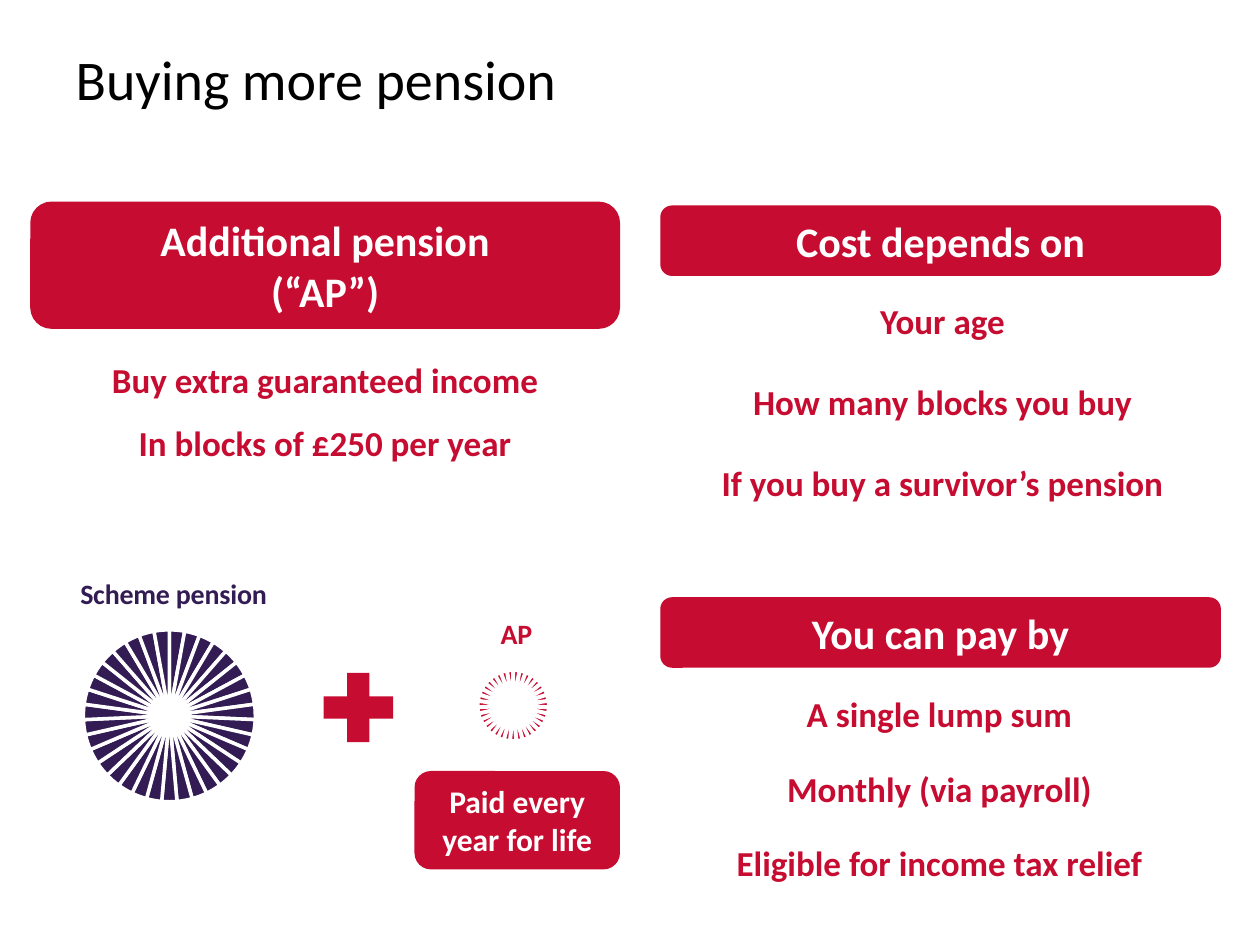
from dataclasses import dataclass

from pptx import Presentation
from pptx.chart.data import CategoryChartData
from pptx.dml.color import RGBColor
from pptx.enum.chart import XL_CHART_TYPE
from pptx.enum.shapes import MSO_SHAPE
from pptx.enum.text import MSO_ANCHOR, PP_ALIGN
from pptx.oxml import parse_xml
from pptx.oxml.ns import nsdecls, qn
from pptx.util import Pt

PIE = XL_CHART_TYPE.PIE
ROUNDED, PLUS = MSO_SHAPE.ROUNDED_RECTANGLE, MSO_SHAPE.MATH_PLUS
TOP, MIDDLE = MSO_ANCHOR.TOP, MSO_ANCHOR.MIDDLE
LEFT, CENTER = PP_ALIGN.LEFT, PP_ALIGN.CENTER
SLICES = 35


@dataclass(frozen=True)
class Theme:
    font: str = "Calibri"
    red: RGBColor = RGBColor(0xC6, 0x0C, 0x30)
    purple: RGBColor = RGBColor(0x33, 0x1C, 0x54)
    white: RGBColor = RGBColor(0xFF, 0xFF, 0xFF)
    black: RGBColor = RGBColor(0, 0, 0)
    title: int = 32
    heading: int = 24
    item: int = 20
    note: int = 18
    chart_title: int = 16
    chart: int = 10


THEME = Theme()


@dataclass(frozen=True)
class Box:
    left: float
    top: float
    width: float
    height: float


@dataclass(frozen=True)
class Panel:
    heading: str
    header: Box
    items: tuple[str, ...]
    items_left: float
    items_top: float
    step: float


@dataclass(frozen=True)
class Wheel:
    title: str
    box: Box
    color: RGBColor
    title_at: tuple[float, float]
    plot: tuple[float, float, float, float]  # fractions of the chart
    explosion: int = 0


PANELS = (
    Panel("Additional pension\n(“AP”)", Box(17.3, 115.2, 337, 72.7),
          ("Buy extra guaranteed income", "In blocks of £250 per year"), 17.3, 199.4, 36),
    Panel("Cost depends on", Box(377.3, 117.4, 320.4, 40.3),
          ("Your age", "How many blocks you buy", "If you buy a survivor’s pension"),
          378.4, 165.6, 46.5),
    Panel("You can pay by", Box(377.3, 341.3, 320.4, 40.3),
          ("A single lump sum", "Monthly (via payroll)", "Eligible for income tax relief"),
          376.6, 390.2, 42.8),
)
WHEELS = (
    Wheel("Scheme pension", Box(-20.2, 314.6, 234, 156.2), THEME.purple,
          (0.27, 0.07), (0.29, 0.29, 0.42, 0.63)),
    Wheel("AP", Box(221, 337.7, 144.7, 96.5), THEME.red,
          (0.43, 0.11), (0.36, 0.47, 0.28, 0.42), 9),
)


def place(box: Box) -> tuple[Pt, ...]:
    return Pt(box.left), Pt(box.top), Pt(box.width), Pt(box.height)


def write(tf, text: str, *, size: int, color: RGBColor, bold: bool = True,
          align=CENTER, anchor=MIDDLE) -> None:
    """Fill a text frame, one paragraph per line of text."""
    tf.word_wrap = True
    tf.vertical_anchor = anchor
    for i, line in enumerate(text.split("\n")):
        p = tf.paragraphs[0] if i == 0 else tf.add_paragraph()
        p.alignment = align
        r = p.add_run()
        r.text = line
        r.font.name, r.font.size, r.font.bold = THEME.font, Pt(size), bold
        r.font.color.rgb = color


def add_box(s, kind, box: Box, fill: RGBColor):
    sp = s.shapes.add_shape(kind, *place(box))
    sp.shadow.inherit = False
    sp.fill.solid()
    sp.fill.fore_color.rgb = fill
    sp.line.fill.background()
    return sp


def add_panel(s, panel: Panel) -> None:
    header = add_box(s, ROUNDED, panel.header, THEME.red)
    write(header.text_frame, panel.heading, size=THEME.heading, color=THEME.white)
    for i, item in enumerate(panel.items):
        box = Box(panel.items_left, panel.items_top + i * panel.step, panel.header.width, 34.6)
        sp = add_box(s, ROUNDED, box, THEME.white)
        write(sp.text_frame, item, size=THEME.item, color=THEME.red)


def set_layout(element, index: int, values: dict[str, float], inner: bool = False) -> None:
    """Give a chart part a fixed position."""
    for old in element.findall(qn("c:layout")):
        element.remove(old)
    target = '<c:layoutTarget val="inner"/>' if inner else ""
    modes = "".join(f'<c:{k}Mode val="edge"/>' for k in "xy")
    sizes = "".join(f'<c:{k} val="{v}"/>' for k, v in values.items())
    element.insert(index, parse_xml(
        f'<c:layout {nsdecls("c")}><c:manualLayout>{target}{modes}{sizes}'
        "</c:manualLayout></c:layout>"))


def paint_slice(fmt, color: RGBColor) -> None:
    fmt.fill.solid()
    fmt.fill.fore_color.rgb = color
    fmt.line.color.rgb = THEME.white
    fmt.line.width = Pt(2)


def add_wheel(s, wheel: Wheel) -> None:
    data = CategoryChartData()
    data.categories = [str(n + 1) for n in range(SLICES)]
    data.add_series("Series 1", [3] * SLICES)
    chart = s.shapes.add_chart(PIE, *place(wheel.box), data).chart
    chart.has_legend = False
    chart.font.name, chart.font.size = THEME.font, Pt(THEME.chart)
    chart.font.color.rgb = THEME.black

    # Chart title
    title = chart.chart_title
    write(title.text_frame, wheel.title, size=THEME.chart_title, color=wheel.color)
    set_layout(title._element, 1, dict(zip("xy", wheel.title_at)))
    title.include_in_layout = False

    # Equal slices with white gaps
    plot = chart.plots[0]
    plot.vary_by_categories = False
    series = plot.series[0]
    paint_slice(series.format, wheel.color)
    for i in range(SLICES):
        paint_slice(series.points[i].format, wheel.color)
    if wheel.explosion:
        ser = series._element
        xml = f'<c:explosion {nsdecls("c")} val="{wheel.explosion}"/>'
        ser.find(qn("c:spPr")).addnext(parse_xml(xml))
        for point in ser.findall(qn("c:dPt")):
            point.find(qn("c:spPr")).addprevious(parse_xml(xml))
    area = chart._chartSpace.chart.plotArea
    set_layout(area, 0, dict(zip("xywh", wheel.plot)), inner=True)


def main() -> None:
    prs = Presentation()
    prs.slide_width, prs.slide_height = Pt(720), Pt(540)
    s = prs.slides.add_slide(prs.slide_layouts[5])

    # Title
    title = s.shapes.title
    title.left, title.top, title.width, title.height = place(Box(36, 21.6, 648, 90))
    write(title.text_frame, "Buying more pension", size=THEME.title, color=THEME.black,
          bold=False, align=LEFT, anchor=TOP)

    # Scheme pension plus additional pension
    for wheel in WHEELS:
        add_wheel(s, wheel)
    add_box(s, PLUS, Box(177.8, 377.3, 54, 54), THEME.red)
    note = add_box(s, ROUNDED, Box(236.9, 440.6, 117.4, 56.2), THEME.red)
    write(note.text_frame, "Paid every year for life", size=THEME.note, color=THEME.white)

    # Headed lists
    for panel in PANELS:
        add_panel(s, panel)
    prs.save("out.pptx")


if __name__ == "__main__":
    main()
